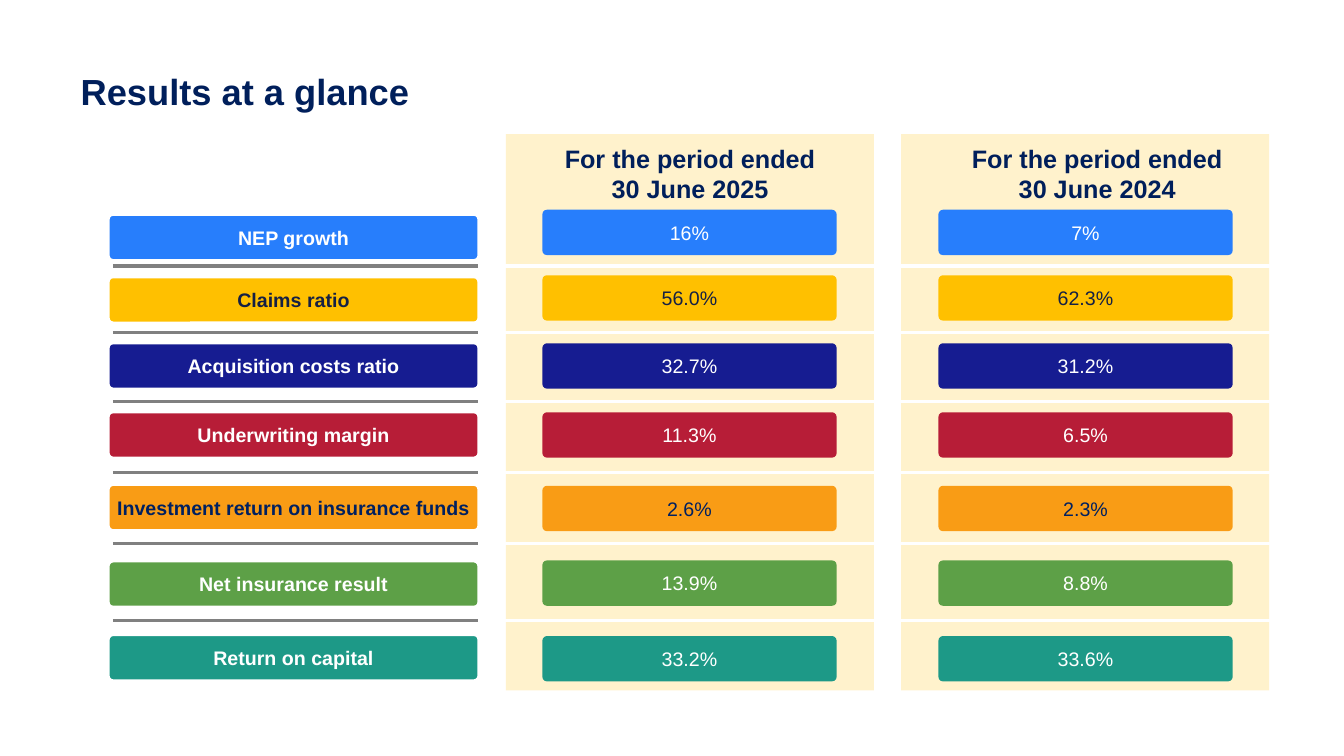
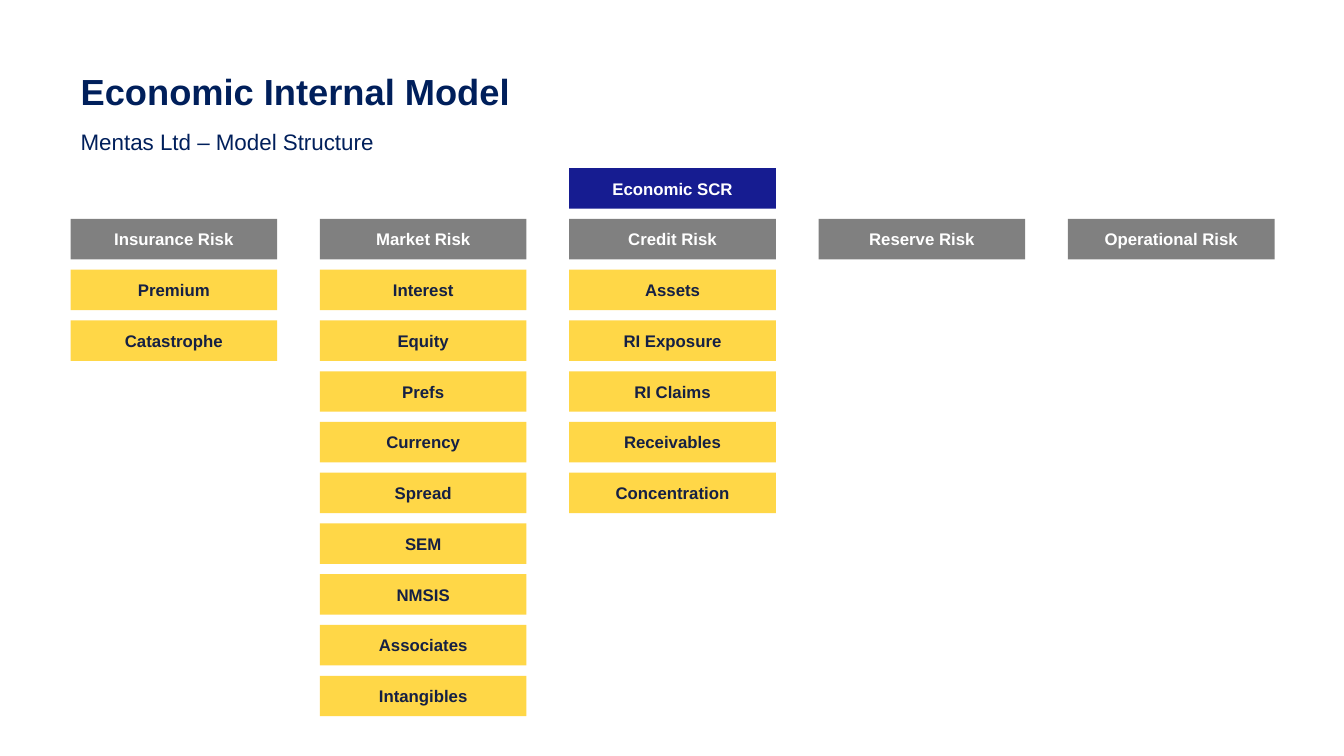
"""Build two slides: insurance results at a glance and a risk model structure."""
import pptx
import pptx.dml.color
import pptx.enum.shapes
import pptx.enum.text
import pptx.util
from pptx.oxml.ns import qn
from lxml import etree

Pt = pptx.util.Pt
RGB = pptx.dml.color.RGBColor
SHAPE = pptx.enum.shapes.MSO_SHAPE
ANCHOR = pptx.enum.text.MSO_ANCHOR
ALIGN = pptx.enum.text.PP_ALIGN

WHITE = RGB(0xFF, 0xFF, 0xFF)
NAVY = RGB(0x00, 0x1F, 0x5B)
INK = RGB(0x15, 0x20, 0x44)
MIDNIGHT = RGB(0x00, 0x20, 0x60)
INDIGO = RGB(0x16, 0x1C, 0x91)
BLUE = RGB(0x27, 0x7E, 0xFC)
AMBER = RGB(0xFF, 0xC0, 0x00)
RED = RGB(0xB7, 0x1D, 0x37)
ORANGE = RGB(0xF9, 0x9C, 0x15)
GREEN = RGB(0x5D, 0xA0, 0x47)
TEAL = RGB(0x1D, 0x99, 0x87)
GREY = RGB(0x80, 0x80, 0x80)
CREAM = RGB(0xFF, 0xF2, 0xCC)
YELLOW = RGB(0xFF, 0xD7, 0x47)

FONT = "Arial"
MARGIN = 50.4

METRICS = [
    ("NEP growth", "16%", "7%", BLUE, WHITE, 153.4, 149.8),
    ("Claims ratio", "56.0%", "62.3%", AMBER, INK, 198, 196.6),
    ("Acquisition costs ratio", "32.7%", "31.2%", INDIGO, WHITE, 245.2, 245.2),
    ("Underwriting margin", "11.3%", "6.5%", RED, WHITE, 294.5, 294.5),
    ("Investment return on insurance funds", "2.6%", "2.3%", ORANGE, MIDNIGHT, 346.3, 347),
    ("Net insurance result", "13.9%", "8.8%", GREEN, WHITE, 401, 400.3),
    ("Return on capital", "33.2%", "33.6%", TEAL, WHITE, 453.6, 454.3),
]
RULE_TOPS = [190, 237.6, 286.6, 337.6, 388, 443.5]
PERIODS = [("30 June 2025", 361.4, 387.4), ("30 June 2024", 643.7, 670.3)]

RISKS = [
    ("Insurance Risk", ["Premium", "Catastrophe"]),
    ("Market Risk", ["Interest", "Equity", "Prefs", "Currency", "Spread", "SEM",
                     "NMSIS", "Associates", "Intangibles"]),
    ("Credit Risk", ["Assets", "RI Exposure", "RI Claims", "Receivables", "Concentration"]),
    ("Reserve Risk", []),
    ("Operational Risk", []),
]


def style(paragraph, size, color, bold=False, align=None, spacing=None):
    """Format one paragraph."""
    paragraph.alignment = align
    paragraph.line_spacing = spacing
    font = paragraph.font
    font.name, font.size, font.bold = FONT, Pt(size), bold
    font.color.rgb = color


def fill_placeholder(holder, text, box, top_inset, size, bold, spacing):
    """Place a placeholder and give it one unbulleted line."""
    holder.left, holder.top, holder.width, holder.height = map(Pt, box)
    frame = holder.text_frame
    frame.text = text
    frame.auto_size = pptx.enum.text.MSO_AUTO_SIZE.NONE
    frame.vertical_anchor = ANCHOR.TOP
    frame.margin_top = Pt(top_inset)
    line = frame.paragraphs[0]
    properties = line._p.get_or_add_pPr()
    properties.set("marL", "0")
    properties.set("indent", "0")
    etree.SubElement(properties, qn("a:buNone"))
    line.space_before = Pt(0)
    style(line, size, NAVY, bold, ALIGN.LEFT, spacing)


def add_titled_slide(deck, layout, title):
    """Add a slide with the shared title style."""
    slide = deck.slides.add_slide(deck.slide_layouts[layout])
    fill_placeholder(slide.shapes.title, title, (MARGIN, 54.7, 860.4, 26), 8.2, 25.9, True, 0.5)
    return slide


def add_box(slide, kind, box, fill, outline=None):
    """Add a filled shape without a shadow."""
    shape = slide.shapes.add_shape(kind, *map(Pt, box))
    shape.shadow.inherit = False
    shape.fill.solid()
    shape.fill.fore_color.rgb = fill
    if outline is None:
        shape.line.fill.background()
    else:
        shape.line.color.rgb = outline
        shape.line.width = Pt(1.5)
    return shape


def add_label(slide, kind, box, fill, text, size, color, bold=True, outline=None):
    """Add a filled shape with one centred line of text."""
    shape = add_box(slide, kind, box, fill, outline)
    if kind == SHAPE.ROUNDED_RECTANGLE:
        shape.adjustments[0] = 0.1
    frame = shape.text_frame
    frame.text = text
    frame.word_wrap = True
    frame.vertical_anchor = ANCHOR.MIDDLE
    frame.margin_left = frame.margin_right = Pt(3)
    frame.margin_top = frame.margin_bottom = Pt(2)
    style(frame.paragraphs[0], size, color, bold, ALIGN.CENTER)


def add_rule(slide, start, end, top, color):
    """Add a horizontal line."""
    rule = slide.shapes.add_connector(
        pptx.enum.shapes.MSO_CONNECTOR.STRAIGHT, Pt(start), Pt(top), Pt(end), Pt(top))
    rule.line.color.rgb = color
    rule.line.width = Pt(2.25)
    etree.SubElement(rule._element.spPr, qn("a:effectLst"))


def add_period_heading(slide, left, date):
    """Add the two-line heading of a period panel."""
    frame = slide.shapes.add_textbox(Pt(left), Pt(98.6), Pt(256), Pt(51)).text_frame
    frame.word_wrap = True
    frame.text = "For the period ended\n" + date
    for line in frame.paragraphs:
        style(line, 18, NAVY, True, ALIGN.CENTER)


def build_results(deck):
    """Build the results slide."""
    slide = add_titled_slide(deck, 5, "Results at a glance")
    for _, panel_left, _ in PERIODS:
        add_box(slide, SHAPE.RECTANGLE, (panel_left, 95.8, 262.8, 397.4), CREAM)
    for name, current, prior, fill, color, label_top, value_top in METRICS:
        add_label(slide, SHAPE.ROUNDED_RECTANGLE, (77.6, label_top, 264.2, 32.4),
                  fill, name, 14, color, outline=WHITE)
        for value, (_, _, value_left) in zip((current, prior), PERIODS):
            add_label(slide, SHAPE.ROUNDED_RECTANGLE, (value_left, value_top, 210.2, 32.4),
                      fill, value, 14, color, bold=False)
    for top in RULE_TOPS:
        add_rule(slide, 288, 907.2, top, WHITE)
        add_rule(slide, 80.6, 341.3, top, GREY)
    for date, panel_left, _ in PERIODS:
        add_period_heading(slide, panel_left + 11 - 8.5 * (panel_left < 500) + 1, date)


def build_model(deck):
    """Build the model structure slide."""
    slide = add_titled_slide(deck, 1, "Economic Internal Model")
    fill_placeholder(slide.placeholders[1], "Mentas Ltd – Model Structure",
                     (MARGIN, 88.6, 624.2, 26), 5, 16, False, 0.9)

    def add_cell(column, row, text, fill, color):
        """Add one box on the grid."""
        box = (MARGIN + 178.1 * column, 120.2 + 36.25 * row, 147.6, 28.8)
        add_label(slide, SHAPE.RECTANGLE, box, fill, text, 12, color)

    add_cell(2, 0, "Economic SCR", INDIGO, WHITE)
    for column, (risk, drivers) in enumerate(RISKS):
        add_cell(column, 1, risk, GREY, WHITE)
        for row, driver in enumerate(drivers, 2):
            add_cell(column, row, driver, YELLOW, INK)


def main():
    """Build and save the deck."""
    deck = pptx.Presentation()
    deck.slide_width, deck.slide_height = Pt(960), Pt(540)
    build_results(deck)
    build_model(deck)
    deck.save("out.pptx")


if __name__ == "__main__":
    main()
